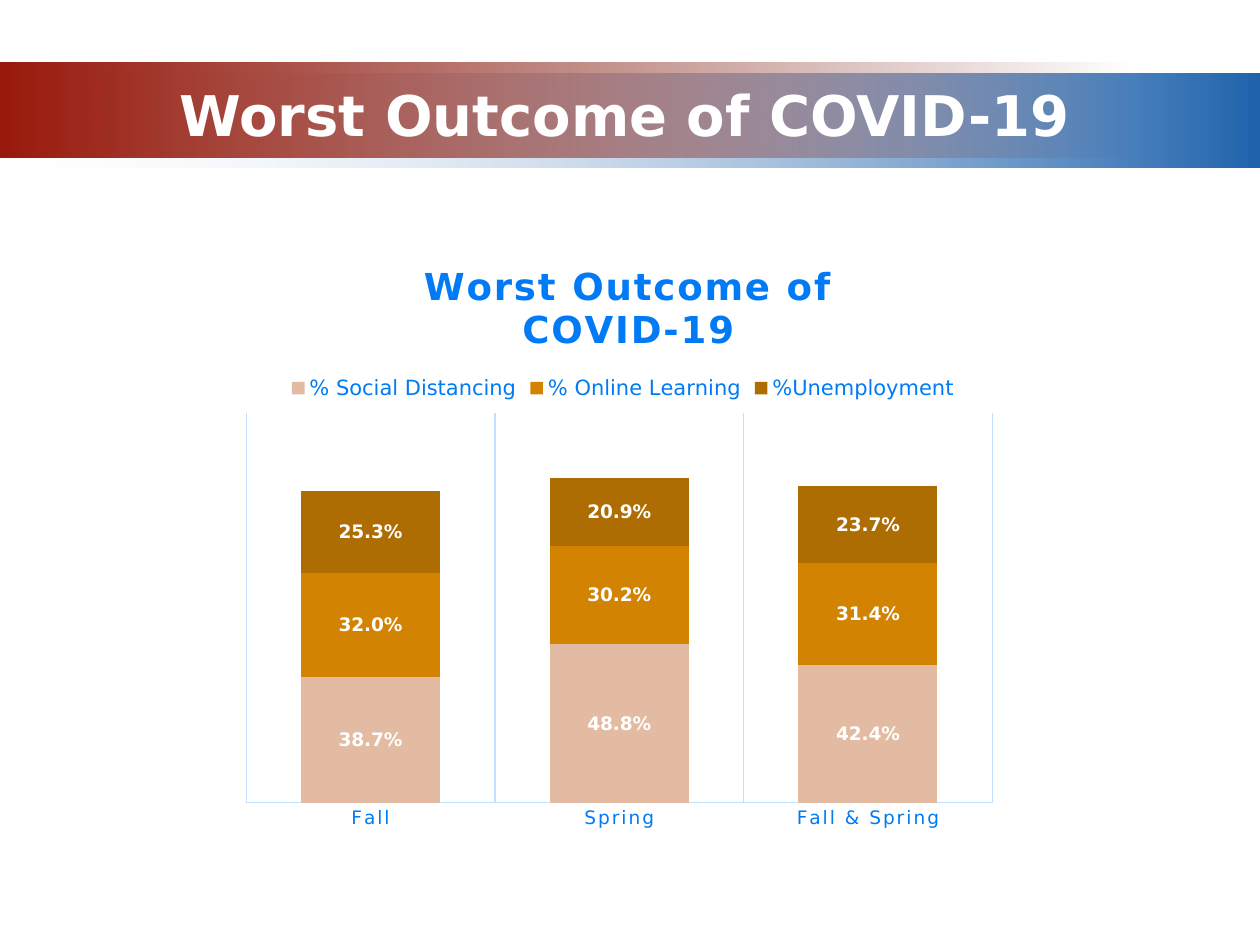
from dataclasses import dataclass
from typing import NamedTuple

from lxml.etree import SubElement
from pptx import Presentation
from pptx.chart.data import CategoryChartData
from pptx.dml.color import RGBColor
from pptx.enum.chart import (XL_CHART_TYPE, XL_LABEL_POSITION, XL_LEGEND_POSITION,
                             XL_TICK_LABEL_POSITION, XL_TICK_MARK)
from pptx.enum.shapes import MSO_SHAPE
from pptx.enum.text import MSO_ANCHOR, PP_ALIGN
from pptx.oxml.ns import qn
from pptx.util import Cm, Pt


@dataclass(frozen=True)
class Theme:
    face: str = "DejaVu Sans"
    white: str = "FFFFFF"
    blue: str = "007AF5"
    grid: str = "C2E0FF"
    red_band: tuple = ("99190B", "6D1208")
    blue_band: tuple = ("F1F2F7", "1F63AD")
    series: tuple = ("E3BBA2", "D28302", "AE6D02")
    heading_size: float = 32
    chart_title_size: float = 21.2
    legend_size: float = 12
    label_size: float = 10.6
    letter_spacing: int = 120


class Box(NamedTuple):
    """A region in centimetres."""
    left: float
    top: float
    width: float
    height: float

    def lengths(self):
        return [Cm(side) for side in self]


THEME = Theme()
HEADER = Box(0, 1.27, 25.4, 2.11)
OUTCOMES = Box(4.65, 4.65, 15.67, 12.27)
SEASONS = ("Fall", "Spring", "Fall & Spring")
SHARES = {
    "% Social Distancing": (0.387, 0.488, 0.424),
    "% Online Learning": (0.32, 0.302, 0.314),
    "%Unemployment": (0.253, 0.209, 0.237),
}


def style_font(font, size, color, bold=False):
    font.name = THEME.face
    font.size = Pt(size)
    font.bold = bold
    font.color.rgb = RGBColor.from_string(color)


def add_band(slide, box, colors, clear_stop):
    """Add a horizontal gradient whose stop number clear_stop is transparent."""
    band = slide.shapes.add_shape(MSO_SHAPE.RECTANGLE, *box.lengths())
    band.shadow.inherit = False
    band.line.fill.background()
    band.fill.gradient()
    band.fill.gradient_angle = 0
    for stop, color in zip(band.fill.gradient_stops, colors):
        stop.color.rgb = RGBColor.from_string(color)
    stop_colors = list(band._element.spPr.iter(qn("a:srgbClr")))
    SubElement(stop_colors[clear_stop], qn("a:alpha")).set("val", "0")


def add_header(slide, box):
    band_height = 1.9
    offset = box.height - band_height
    add_band(slide, Box(box.left, box.top + offset, box.width, band_height),
             THEME.blue_band, clear_stop=0)
    add_band(slide, Box(box.left, box.top, box.width * 0.9, band_height),
             THEME.red_band, clear_stop=1)
    heading_box = Box(box.left + 2.34, box.top + 0.25, 20.52, 1.57)
    heading = slide.shapes.add_textbox(*heading_box.lengths()).text_frame
    heading.word_wrap = True
    heading.vertical_anchor = MSO_ANCHOR.MIDDLE
    heading.text = "Worst Outcome of COVID-19"
    paragraph = heading.paragraphs[0]
    paragraph.alignment = PP_ALIGN.CENTER
    style_font(paragraph.runs[0].font, THEME.heading_size, THEME.white, bold=True)


def place_part(part, inner=False, **fractions):
    """Fix a chart part at fractions of the chart's width and height."""
    for old in part.findall(qn("c:layout")):
        part.remove(old)
    layout = SubElement(part, qn("c:layout"))
    manual = SubElement(layout, qn("c:manualLayout"))
    if inner:
        SubElement(manual, qn("c:layoutTarget")).set("val", "inner")
    for side in ("x", "y"):
        SubElement(manual, qn(f"c:{side}Mode")).set("val", "edge")
    for side, fraction in fractions.items():
        SubElement(manual, qn(f"c:{side}")).set("val", str(fraction))
    # The schema wants the layout right after the text, position or at the start.
    leaders = [child for child in part
               if child.tag in (qn("c:tx"), qn("c:legendPos"))]
    part.insert(part.index(leaders[-1]) + 1 if leaders else 0, layout)


def style_title(chart):
    chart.has_title = True
    title = chart.chart_title
    title.text_frame.text = "Worst Outcome of COVID-19"
    title.include_in_layout = False
    font = title.text_frame.paragraphs[0].runs[0].font
    style_font(font, THEME.chart_title_size, THEME.blue, bold=True)
    font._element.set("spc", str(THEME.letter_spacing))
    place_part(title._element, x=0.24, y=0.04)


def style_legend(chart):
    chart.has_legend = True
    chart.legend.position = XL_LEGEND_POSITION.TOP
    chart.legend.include_in_layout = False
    style_font(chart.legend.font, THEME.legend_size, THEME.blue)
    place_part(chart.legend._element, x=0.07, y=0.23)


def style_axes(chart):
    seasons, shares = chart.category_axis, chart.value_axis
    seasons.has_major_gridlines = True
    for line in (seasons.format.line, seasons.major_gridlines.format.line):
        line.color.rgb = RGBColor.from_string(THEME.grid)
        line.width = Pt(0.75)
    seasons.major_tick_mark = XL_TICK_MARK.NONE
    seasons.tick_label_position = XL_TICK_LABEL_POSITION.NEXT_TO_AXIS
    font = seasons.tick_labels.font
    style_font(font, THEME.label_size, THEME.blue)
    font._element.set("spc", str(THEME.letter_spacing))
    shares.has_major_gridlines = False
    shares.minimum_scale, shares.maximum_scale = 0, 1.2
    shares.tick_labels.number_format = "0.0%"
    shares.tick_labels.number_format_is_linked = False
    shares.visible = False


def style_series(plot):
    plot.gap_width, plot.overlap = 79, 100
    plot.vary_by_categories = False
    for series, color in zip(plot.series, THEME.series):
        series.format.fill.solid()
        series.format.fill.fore_color.rgb = RGBColor.from_string(color)
        labels = series.data_labels
        labels.show_value = True
        labels.number_format = "0.0%"
        labels.number_format_is_linked = False
        labels.position = XL_LABEL_POSITION.CENTER
        style_font(labels.font, THEME.label_size, THEME.white, bold=True)


def add_outcomes(slide, box):
    outcomes = CategoryChartData(number_format="0.0%")
    outcomes.categories = SEASONS
    for name, shares in SHARES.items():
        outcomes.add_series(name, shares)
    chart = slide.shapes.add_chart(
        XL_CHART_TYPE.COLUMN_STACKED, *box.lengths(), outcomes).chart
    style_font(chart.font, THEME.label_size, THEME.blue)
    style_title(chart)
    style_legend(chart)
    style_axes(chart)
    style_series(chart.plots[0])
    plot_area = chart._chartSpace.chart.plotArea
    place_part(plot_area, inner=True, x=0.02, y=0.3, w=0.96, h=0.64)


def main():
    presentation = Presentation()
    presentation.slide_width, presentation.slide_height = Cm(25.4), Cm(19.05)
    slide = presentation.slides.add_slide(presentation.slide_layouts[6])
    add_header(slide, HEADER)
    add_outcomes(slide, OUTCOMES)
    presentation.save("out.pptx")


if __name__ == "__main__":
    main()
